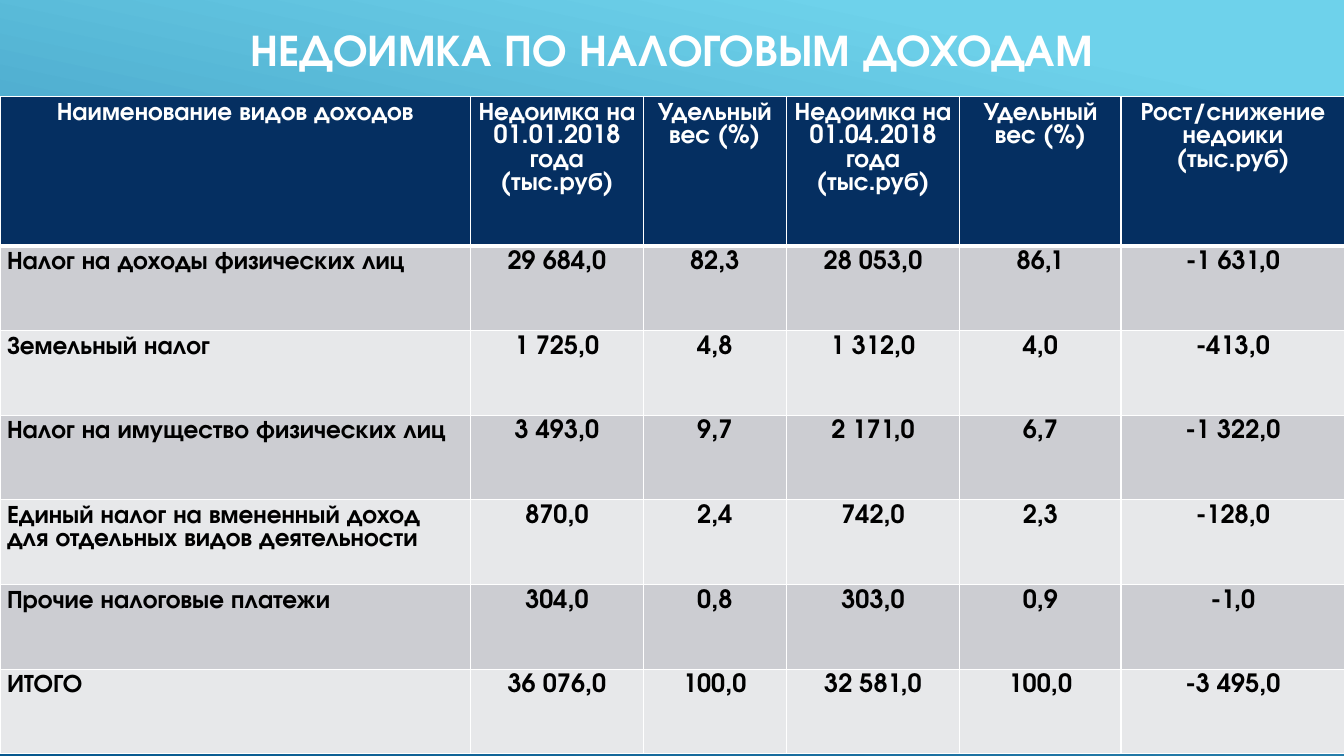
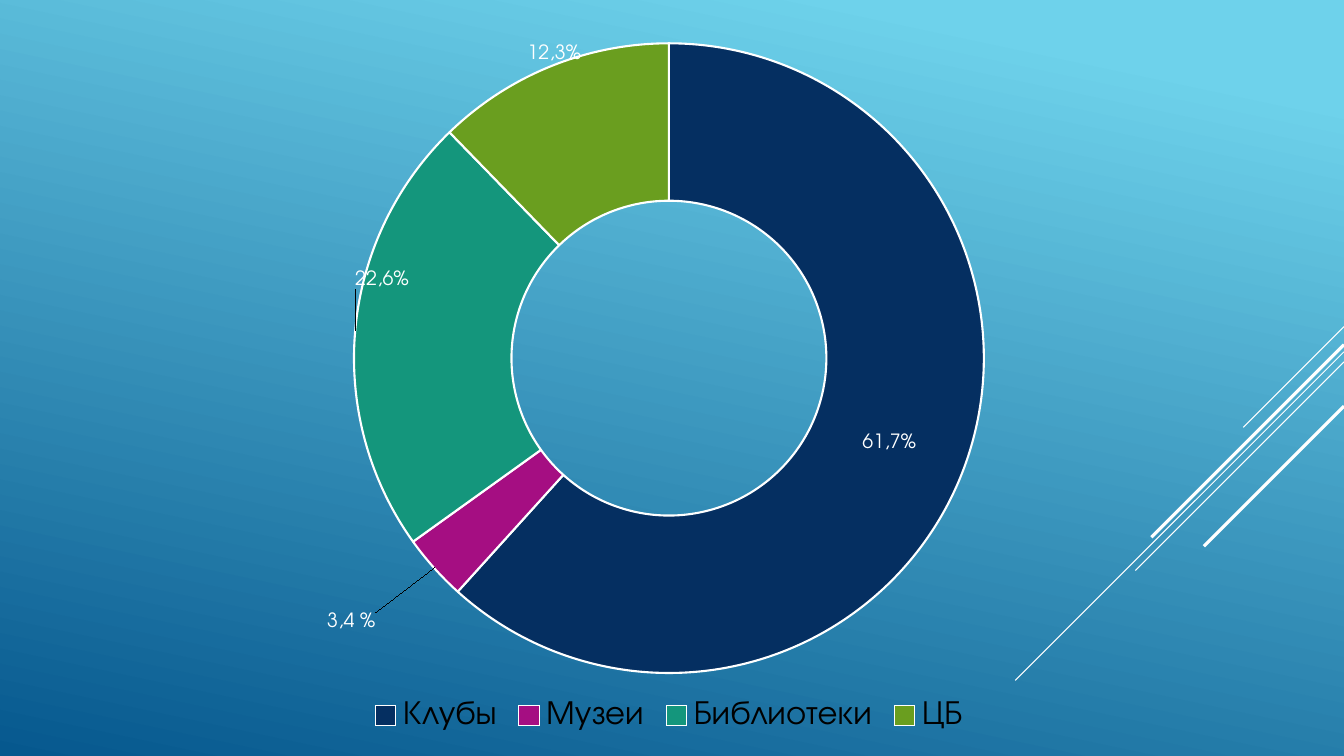
from lxml.etree import SubElement
from pptx import Presentation
from pptx.chart.data import CategoryChartData
from pptx.dml.color import RGBColor
from pptx.enum.chart import XL_CHART_TYPE, XL_LEGEND_POSITION
from pptx.enum.shapes import MSO_CONNECTOR
from pptx.enum.text import MSO_ANCHOR, PP_ALIGN
from pptx.oxml import parse_xml
from pptx.oxml.ns import nsdecls, qn
from pptx.util import Inches, Pt

FONT = "TeX Gyre Adventor"
COLORS = {
    "white": "FFFFFF",
    "black": "000000",
    "sky": "6ED2EB",
    "sea": "06588E",
    "navy": "052F61",
    "magenta": "A50E82",
    "teal": "14967C",
    "green": "6A9E1F",
    "band_dark": "CCCDD2",
    "band_light": "E7E8EA",
}
SLIDE_WIDTH, SLIDE_HEIGHT = 13.33, 7.5
RAYS = [(3.24, 1, 0.75), (3.49, 3.26, 0.75), (3.59, 2.07, 0.75),
        (3.42, 1.91, 2.25), (4.03, 1.39, 2.25)]

COLUMN_WIDTHS = [4.67, 1.71, 1.42, 1.72, 1.6, 2.22]
HEADER_HEIGHT, ROW_HEIGHT = 1.48, 0.84
HEADER = [
    "Наименование видов доходов",
    "Недоимка на 01.01.2018 года (тыс.руб)",
    "Удельный вес (%)",
    "Недоимка на 01.04.2018 года\n(тыс.руб)",
    "Удельный вес (%)",
    "Рост/снижение недоики\n(тыс.руб)",
]
ARREARS = [
    ["Налог на доходы физических лиц", "29 684,0", "82,3", "28 053,0", "86,1", "-1 631,0"],
    ["Земельный налог", "1 725,0", "4,8", "1 312,0", "4,0", "-413,0"],
    ["Налог на имущество физических лиц", "3 493,0", "9,7", "2 171,0", "6,7", "-1 322,0"],
    ["Единый налог на вмененный доход для отдельных видов деятельности",
     "870,0", "2,4", "742,0", "2,3", "-128,0"],
    ["Прочие налоговые платежи", "304,0", "0,8", "303,0", "0,9", "-1,0"],
    ["ИТОГО", "36 076,0", "100,0", "32 581,0", "100,0", "-3 495,0"],
]
SPENDING = [
    ("Клубы", 8035.3, "61,7%", "navy", None),
    ("Музеи", 442.3, "3,4 %", "magenta", (-0.11, 0.15)),
    ("Библиотеки", 2948, "22,6%", "teal", (-0.04, -0.08)),
    ("ЦБ", 1598.1, "12,3%", "green", (-0.02, -0.12)),
]


def rgb(name):
    return RGBColor.from_string(COLORS[name])


def style_font(font, size, color, bold=False):
    font.name = FONT
    font.size = Pt(size)
    font.bold = bold
    font.color.rgb = rgb(color)


def write(frame, text, size=18, color="white", bold=False, align=PP_ALIGN.CENTER):
    for index, line in enumerate(text.split("\n")):
        paragraph = frame.add_paragraph() if index else frame.paragraphs[0]
        paragraph.alignment = align
        run = paragraph.add_run()
        run.text = line
        style_font(run.font, size, color, bold)


def paint_background(master):
    fill = master.background.fill
    fill.gradient()
    fill.gradient_angle = 258
    for stop, position, color in zip(fill.gradient_stops, (0.1, 1), ("sky", "sea")):
        stop.position = position
        stop.color.rgb = rgb(color)


def add_rays(slide, right):
    for top, reach, weight in RAYS:
        ray = slide.shapes.add_connector(
            MSO_CONNECTOR.STRAIGHT, Inches(right), Inches(top),
            Inches(right - reach), Inches(top + reach))
        ray.line.color.rgb = rgb("white")
        ray.line.width = Pt(weight)
        SubElement(ray._element.spPr, qn("a:effectLst"))


def new_slide(prs):
    slide = prs.slides.add_slide(prs.slide_layouts[6])
    add_rays(slide, SLIDE_WIDTH)
    return slide


def add_title(slide, text, left, top, width, height):
    title = slide.shapes.add_textbox(
        Inches(left), Inches(top), Inches(width), Inches(height))
    title.text_frame.word_wrap = True
    title.text_frame.vertical_anchor = MSO_ANCHOR.MIDDLE
    write(title.text_frame, text, size=32, bold=True)


def add_borders(cell, **weights):
    properties = cell._tc.get_or_add_tcPr()
    for side in "LRTB":
        width = Pt(weights.get(side, 1))
        properties.append(parse_xml(
            f'<a:ln{side} {nsdecls("a")} w="{width}"><a:solidFill>'
            f'<a:srgbClr val="{COLORS["white"]}"/></a:solidFill></a:ln{side}>'))


def fill_cell(cell, text, fill, color, align, **borders):
    cell.margin_left = cell.margin_right = Inches(0.07)
    cell.margin_top = cell.margin_bottom = Inches(0.05)
    add_borders(cell, **borders)
    cell.fill.solid()
    cell.fill.fore_color.rgb = rgb(fill)
    write(cell.text_frame, text, color=color, bold=True, align=align)


def add_arrears_table(slide, left, top):
    height = HEADER_HEIGHT + ROW_HEIGHT * len(ARREARS)
    table = slide.shapes.add_table(
        len(ARREARS) + 1, len(HEADER), Inches(left), Inches(top),
        Inches(sum(COLUMN_WIDTHS)), Inches(height)).table
    for column, width in zip(table.columns, COLUMN_WIDTHS):
        column.width = Inches(width)
    for index, row in enumerate(table.rows):
        row.height = Inches(ROW_HEIGHT if index else HEADER_HEIGHT)
    for column, heading in enumerate(HEADER):
        fill_cell(table.cell(0, column), heading, "navy", "white", PP_ALIGN.CENTER, B=3)
    for row, values in enumerate(ARREARS, 1):
        band = "band_dark" if row % 2 else "band_light"
        top_border = 3 if row == 1 else 1
        for column, value in enumerate(values):
            align = PP_ALIGN.CENTER if column else PP_ALIGN.LEFT
            fill_cell(table.cell(row, column), value, band, "black", align, T=top_border)


def manual_layout(x, y, size=None):
    items = [("x", x), ("y", y)]
    modes = ""
    if size:
        modes = ('<c:layoutTarget val="inner"/><c:xMode val="edge"/>'
                 '<c:yMode val="edge"/>')
        items += zip("wh", size)
    values = "".join(f'<c:{key} val="{value}"/>' for key, value in items)
    return parse_xml(f'<c:layout {nsdecls("c")}><c:manualLayout>{modes}{values}'
                     '</c:manualLayout></c:layout>')


def place_plot(chart, x, y, width, height):
    plot_area = chart._chartSpace.chart.plotArea
    for layout in plot_area.findall(qn("c:layout")):
        plot_area.remove(layout)
    plot_area.insert(0, manual_layout(x, y, (width, height)))


def style_slice(series, index, label, color, offset):
    point = series.points[index]
    point.format.fill.solid()
    point.format.fill.fore_color.rgb = rgb(color)
    point.format.line.color.rgb = rgb("white")
    point.format.line.width = Pt(1.5)
    write(point.data_label.text_frame, label, size=14)
    if offset:
        label_element = series.data_labels._element.findall(qn("c:dLbl"))[index]
        label_element.insert(1, manual_layout(*offset))


def add_spending_chart(slide, left, top, width, height):
    data = CategoryChartData()
    data.categories = [name for name, *_ in SPENDING]
    data.add_series("Series 1", [value for _, value, *_ in SPENDING])
    chart = slide.shapes.add_chart(
        XL_CHART_TYPE.DOUGHNUT, Inches(left), Inches(top),
        Inches(width), Inches(height), data).chart
    chart.has_title = False
    style_font(chart.font, 10, "white")
    chart.has_legend = True
    chart.legend.position = XL_LEGEND_POSITION.BOTTOM
    chart.legend.include_in_layout = False
    style_font(chart.legend.font, 24, "black")
    place_plot(chart, 0.255, 0.02, 0.49, 0.89)
    chart.plots[0].vary_by_categories = True
    series = chart.plots[0].series[0]
    series.data_labels.show_value = True
    style_font(series.data_labels.font, 14, "white")
    for index, (_, _, label, color, offset) in enumerate(SPENDING):
        style_slice(series, index, label, color, offset)


def main():
    prs = Presentation()
    prs.slide_width = Inches(SLIDE_WIDTH)
    prs.slide_height = Inches(SLIDE_HEIGHT)
    paint_background(prs.slide_master)

    arrears_slide = new_slide(prs)
    add_title(arrears_slide, "НЕДОИМКА ПО НАЛОГОВЫМ ДОХОДАМ", 0, 0, SLIDE_WIDTH, 0.96)
    add_arrears_table(arrears_slide, 0, 0.96)

    spending_slide = new_slide(prs)
    add_spending_chart(spending_slide, 0.26, 0.28, 12.75, 7.04)

    prs.save("out.pptx")


if __name__ == "__main__":
    main()
